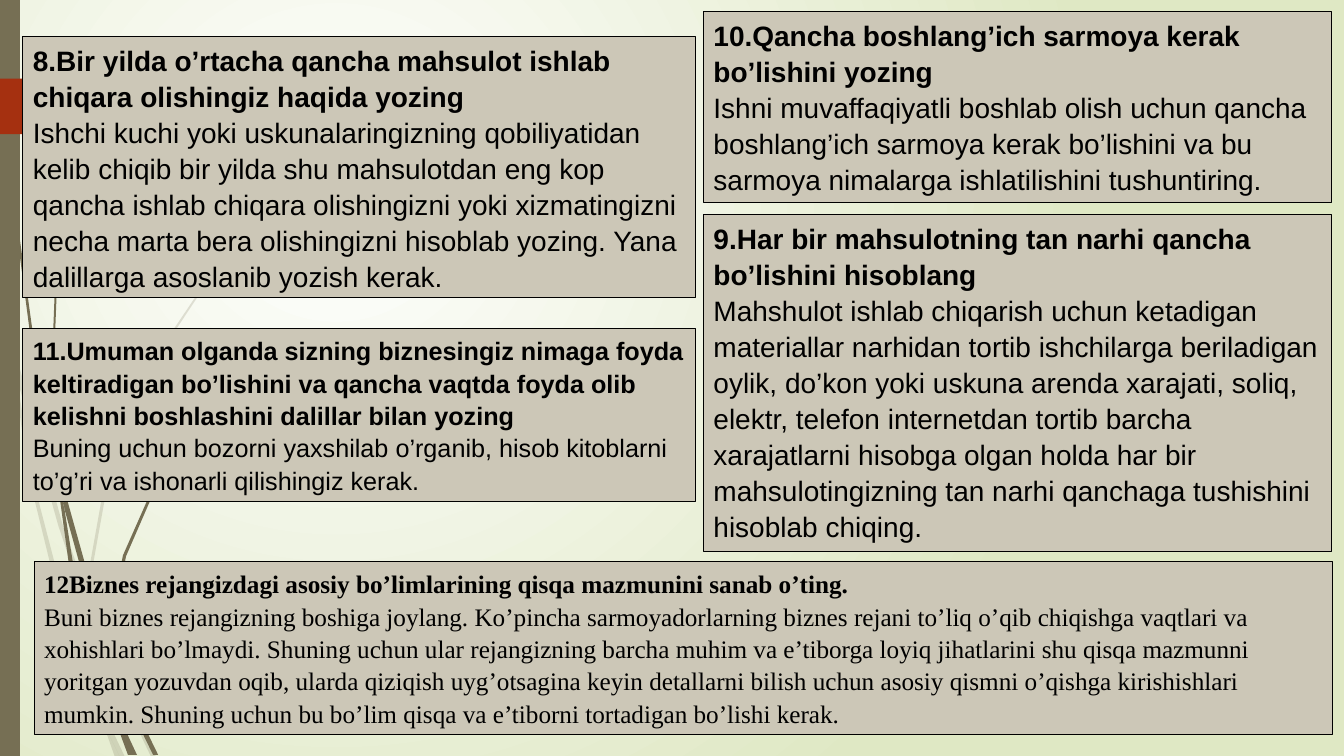
from lxml import etree
from pptx import Presentation
from pptx.dml.color import RGBColor
from pptx.enum.shapes import MSO_SHAPE
from pptx.enum.text import MSO_ANCHOR, MSO_AUTO_SIZE, PP_ALIGN
from pptx.oxml.ns import qn
from pptx.util import Cm, Pt

WHITE = RGBColor(0xFF, 0xFF, 0xFF)
PALE_GREEN = RGBColor(0xDF, 0xE8, 0xC4)
OLIVE = RGBColor(0x76, 0x6F, 0x54)
RUST = RGBColor(0xA5, 0x30, 0x10)
BEIGE = RGBColor(0xCC, 0xC7, 0xB7)
BLACK = RGBColor(0x00, 0x00, 0x00)

# Outlines of the grass blades, in hundredths of an inch
FAINT_BLADES = [
    [(11, 350), (9, 322), (0, 282), (0, 299), (10, 344)],
    [(58, 522), (84, 599), (85, 586), (62, 520), (14, 345), (17, 376)],
    [(92, 607), (88, 596), (88, 610), (123, 694), (150, 751), (155, 751), (127, 692)],
    [(93, 683), (70, 619), (31, 469), (17, 376), (11, 350), (28, 470), (65, 621),
     (92, 693), (101, 714), (99, 707)],
    [(88, 584), (110, 462), (160, 349), (229, 245), (268, 198), (290, 175), (312, 154),
     (312, 153), (289, 175), (268, 197), (228, 244), (158, 348), (107, 461), (85, 584),
     (85, 586), (88, 596)],
    [(101, 714), (114, 751), (119, 751)],
    [(96, 692), (93, 683), (99, 707), (101, 714), (119, 751), (124, 751), (105, 711)],
]
DARK_BLADES = [
    [(7, 110), (17, 233), (33, 355), (56, 477), (57, 481), (55, 457), (55, 453),
     (36, 355), (19, 232), (8, 109), (5, 48), (4, 0), (3, 0), (4, 48)],
    [(88, 592), (106, 645), (106, 633), (106, 631), (93, 590), (60, 472), (64, 505)],
    [(113, 649), (110, 641), (111, 656), (132, 708), (152, 749), (157, 749), (136, 706)],
    [(110, 691), (98, 657), (72, 556), (64, 505), (57, 477), (68, 557), (93, 659),
     (111, 708), (117, 722), (116, 717)],
    [(60, 472), (58, 453), (54, 349), (58, 245), (63, 193), (70, 141), (62, 193),
     (56, 245), (52, 349), (55, 449)],
    [(57, 477), (64, 505), (60, 472), (55, 449), (55, 453)],
    [(111, 633), (125, 552), (158, 476), (205, 406), (231, 374), (245, 359), (261, 344),
     (260, 344), (245, 358), (231, 373), (204, 405), (156, 474), (122, 551), (106, 631),
     (110, 641)],
    [(117, 722), (127, 749), (131, 749)],
    [(116, 706), (110, 691), (116, 717), (117, 722), (130, 749), (136, 749), (122, 719)],
]

# Left, top, width, height in centimetres, then font, size, heading and body
TEXT_BOXES = [
    (0.58, 0.91, 16.94, 6.6, "Arial", 20,
     "8.Bir yilda o’rtacha qancha mahsulot ishlab chiqara olishingiz haqida yozing",
     "Ishchi kuchi yoki uskunalaringizning qobiliyatidan kelib chiqib bir yilda shu "
     "mahsulotdan eng kop qancha ishlab chiqara olishingizni yoki xizmatingizni necha "
     "marta bera olishingizni hisoblab yozing. Yana dalillarga asoslanib yozish kerak."),
    (17.73, 5.41, 15.82, 8.48, "Arial", 20,
     "9.Har bir mahsulotning tan narhi qancha bo’lishini hisoblang",
     "Mahshulot ishlab chiqarish uchun ketadigan materiallar narhidan tortib ishchilarga "
     "beriladigan oylik, do’kon yoki uskuna arenda xarajati, soliq, elektr, telefon "
     "internetdan tortib barcha xarajatlarni hisobga olgan holda har bir "
     "mahsulotingizning tan narhi qanchaga tushishini hisoblab chiqing."),
    (17.73, 0.28, 15.82, 4.83, "Arial", 20,
     "10.Qancha boshlang’ich sarmoya kerak bo’lishini yozing",
     "Ishni muvaffaqiyatli boshlab olish uchun qancha boshlang’ich sarmoya kerak "
     "bo’lishini va bu sarmoya nimalarga ishlatilishini tushuntiring."),
    (0.58, 8.28, 16.94, 4.37, "Arial", 18,
     "11.Umuman olganda sizning biznesingiz nimaga foyda keltiradigan bo’lishini va "
     "qancha vaqtda foyda olib kelishni boshlashini dalillar bilan yozing",
     "Buning uchun bozorni yaxshilab o’rganib, hisob kitoblarni to’g’ri va ishonarli "
     "qilishingiz kerak."),
    (0.86, 14.15, 32.72, 4.37, "Times New Roman", 18,
     "12Biznes rejangizdagi asosiy bo’limlarining qisqa mazmunini sanab o’ting.",
     "Buni biznes rejangizning boshiga joylang. Ko’pincha sarmoyadorlarning biznes rejani "
     "to’liq o’qib chiqishga vaqtlari va xohishlari bo’lmaydi. Shuning uchun ular "
     "rejangizning barcha muhim va e’tiborga loyiq jihatlarini shu qisqa mazmunni yoritgan "
     "yozuvdan oqib, ularda qiziqish uyg’otsagina keyin detallarni bilish uchun asosiy "
     "qismni o’qishga kirishishlari mumkin. Shuning uchun bu bo’lim qisqa va e’tiborni "
     "tortadigan bo’lishi kerak."),
]


def paint_background(slide):
    """Fill the slide with a gradient that spreads out from its upper left."""
    fill = slide.background.fill
    fill.gradient()
    for stop, color in zip(fill.gradient_stops, (WHITE, PALE_GREEN)):
        stop.color.rgb = color
    gradient = slide.background._cSld.find(".//" + qn("a:gradFill"))
    gradient.remove(gradient.find(qn("a:lin")))
    circle = etree.SubElement(gradient, qn("a:path"), path="circle")
    etree.SubElement(circle, qn("a:fillToRect"), l="50000", t="50000", r="100000", b="100000")


def style_plain(shape, color):
    shape.shadow.inherit = False
    shape.fill.solid()
    shape.fill.fore_color.rgb = color
    shape.line.fill.background()


def add_blade(slide, outline, opacity=100):
    builder = slide.shapes.build_freeform(*outline[0], scale=Cm(2.54) / 100)
    builder.add_line_segments(outline[1:], close=True)
    blade = builder.convert_to_shape()
    style_plain(blade, OLIVE)
    if opacity < 100:
        color = blade.fill._xPr.find(".//" + qn("a:srgbClr"))
        etree.SubElement(color, qn("a:alpha"), val=str(opacity * 1000))


def add_left_edge(slide, height):
    """Draw the grass, the side strip and the arrow tab."""
    for outline in FAINT_BLADES:
        add_blade(slide, outline, opacity=20)
    for outline in DARK_BLADES:
        add_blade(slide, outline)
    strip = slide.shapes.add_shape(MSO_SHAPE.RECTANGLE, 0, 0, Cm(0.5), height)
    style_plain(strip, OLIVE)
    tab = slide.shapes.add_shape(MSO_SHAPE.PENTAGON, 0, Cm(1.98), Cm(4.42), Cm(1.4))
    style_plain(tab, RUST)


def add_text_box(slide, left, top, width, height, font_name, size, heading, body):
    shape = slide.shapes.add_shape(
        MSO_SHAPE.RECTANGLE, Cm(left), Cm(top), Cm(width), Cm(height))
    style_plain(shape, BEIGE)
    shape.line.color.rgb = BLACK
    shape.line.width = Pt(0.75)
    frame = shape.text_frame
    frame.word_wrap = True
    frame.auto_size = MSO_AUTO_SIZE.SHAPE_TO_FIT_TEXT
    frame.vertical_anchor = MSO_ANCHOR.TOP
    for paragraph, text, bold, space_after in (
            (frame.paragraphs[0], heading, True, 0),
            (frame.add_paragraph(), body, False, 15)):
        paragraph.alignment = PP_ALIGN.LEFT
        paragraph.line_spacing = 1.07
        paragraph.space_after = Pt(space_after)
        run = paragraph.add_run()
        run.text = text
        run.font.name = font_name
        run.font.size = Pt(size)
        run.font.bold = bold
        run.font.color.rgb = BLACK


def main():
    presentation = Presentation()
    presentation.slide_width = Cm(33.87)
    presentation.slide_height = Cm(19.05)
    slide = presentation.slides.add_slide(presentation.slide_layouts[6])
    paint_background(slide)
    add_left_edge(slide, presentation.slide_height)
    for text_box in TEXT_BOXES:
        add_text_box(slide, *text_box)
    presentation.save("out.pptx")


if __name__ == "__main__":
    main()
